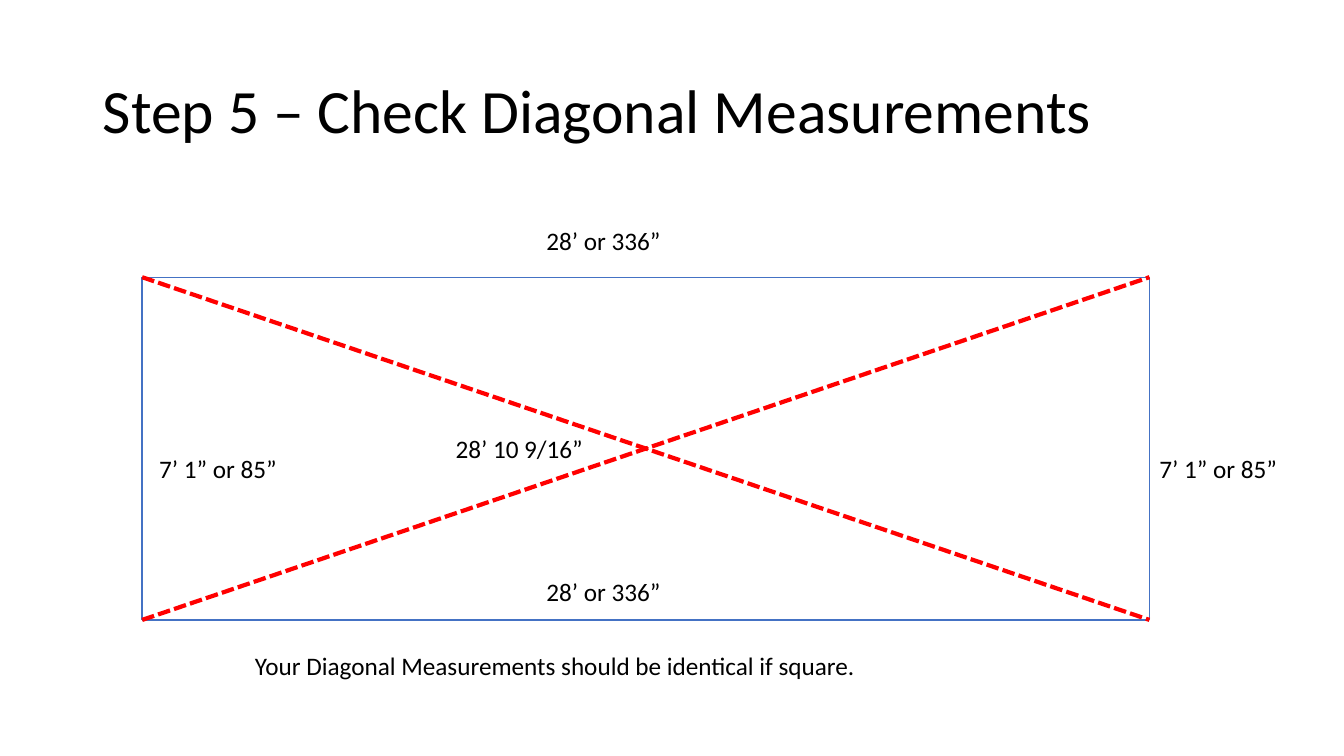
import pptx
import pptx.util
import pptx.dml.color
import pptx.enum.dml
import pptx.enum.shapes
import pptx.enum.text
import lxml.etree
from dataclasses import dataclass


@dataclass
class Theme:
    font: str = "Calibri"
    ink: str = "000000"
    edge: str = "4472C4"
    diagonal: str = "FF0000"
    title_size: int = 44
    label_size: int = 18


theme = Theme()
inches = pptx.util.Inches
color = pptx.dml.color.RGBColor.from_string


def write(frame, text, size=theme.label_size, spacing=None,
          anchor=pptx.enum.text.MSO_ANCHOR.TOP, wrap=False):
    frame.word_wrap = wrap
    frame.vertical_anchor = anchor
    para = frame.paragraphs[0]
    para.alignment = pptx.enum.text.PP_ALIGN.LEFT
    para.line_spacing = spacing
    span = para.add_run()
    span.text = text
    span.font.name = theme.font
    span.font.size = pptx.util.Pt(size)
    span.font.color.rgb = color(theme.ink)


def draw_line(start, end, line_color, width, dash=None):
    line = page.shapes.add_connector(
        pptx.enum.shapes.MSO_CONNECTOR.STRAIGHT,
        *[inches(value) for value in (*start, *end)])
    line.line.color.rgb = color(line_color)
    line.line.width = pptx.util.Pt(width)
    if dash is not None:
        line.line.dash_style = dash
    properties = line.element.spPr
    lxml.etree.SubElement(properties, pptx.oxml.ns.qn("a:effectLst"))


# Page
deck = pptx.Presentation()
deck.slide_width, deck.slide_height = inches(13.33), inches(7.5)
page = deck.slides.add_slide(deck.slide_layouts[5])

# Title
title = page.shapes.title
title.left, title.top = inches(0.92), inches(0.4)
title.width, title.height = inches(11.5), inches(1.45)
write(title.text_frame, "Step 5 – Check Diagonal Measurements",
      size=theme.title_size, spacing=0.9, wrap=True,
      anchor=pptx.enum.text.MSO_ANCHOR.MIDDLE)

# Frame edges and diagonals
left, top, right, bottom = 1.41, 2.75, 11.4, 6.15
corners = [(left, top), (right, top), (right, bottom), (left, bottom)]
for index, corner in enumerate(corners):
    draw_line(corner, corners[(index + 1) % 4], theme.edge, 1)
for start, end in ((0, 2), (3, 1)):
    draw_line(corners[start], corners[end], theme.diagonal, 3,
              pptx.enum.dml.MSO_LINE.SQUARE_DOT)

# Measurements and note
length, height = "28’ or 336”", "7’ 1” or 85”"
labels = [
    (length, 5.32, 2.19, 1.35),
    (length, 5.32, 5.67, 1.35),
    (height, 1.48, 4.45, 1.38),
    (height, right, 4.45, 1.38),
    ("28’ 10 9/16”", 4.42, 4.25, 1.48),
    ("Your Diagonal Measurements should be identical if square.", 2.43, 6.4, 6.22),
]
for text, x, y, width in labels:
    box = page.shapes.add_textbox(inches(x), inches(y), inches(width), inches(0.4))
    box.text_frame.auto_size = pptx.enum.text.MSO_AUTO_SIZE.SHAPE_TO_FIT_TEXT
    write(box.text_frame, text)

deck.save("out.pptx")
